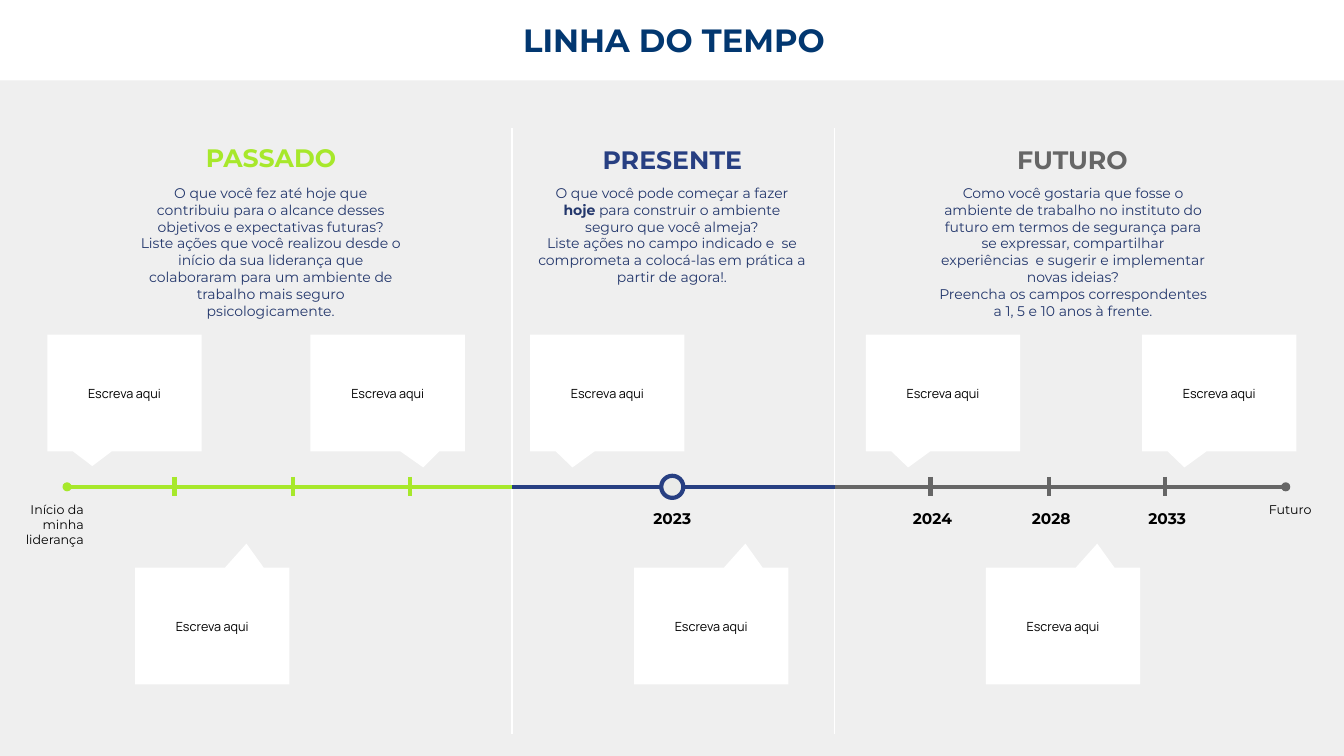
from dataclasses import dataclass

from lxml import etree
from pptx import Presentation
from pptx import util as u
from pptx.dml.color import RGBColor
from pptx.enum import shapes, text
from pptx.oxml.ns import qn

COLORS = {
    "background": "EFEFEF",
    "white": "FFFFFF",
    "black": "000000",
    "title": "023770",
    "past": "A7E82B",
    "present": "273F82",
    "future": "666666",
    "body": "23376C",
    "ring": "EAEBE9",
}
AXIS_Y = 347.75
AXIS_START, PAST_END, PRESENT_END, AXIS_END = 46.8, 365.8, 596.2, 916.6
CENTER, RIGHT = text.PP_ALIGN.CENTER, text.PP_ALIGN.RIGHT


@dataclass
class Style:
    size: float
    color: str
    bold: bool = False
    align: text.PP_ALIGN = CENTER
    font: str = "Montserrat"


@dataclass
class Label:
    left: float
    top: float
    width: float
    height: float
    paragraphs: list[list[str]]
    style: Style


@dataclass
class Line:
    x1: float
    y1: float
    x2: float
    y2: float
    color: str
    width: float = 3


@dataclass
class Dot:
    center: float
    size: float
    fill: str
    outline: str | None = None


@dataclass
class Callout:
    left: float
    top: float
    tip: tuple[float, float]


TITLE = Style(23, "title", bold=True)
BODY = Style(10, "body")
YEAR = Style(11, "black", bold=True)
END = Style(9, "black", align=RIGHT)
PROMPT = Style(9, "black", font="Manrope")

UPPER, LOWER = 239, 405.4
TIP_UP, TIP_LEFT = (0.222, -0.705), (-0.226, 0.637)
CALLOUTS = [
    Callout(33.8, UPPER, (-0.208, 0.625)),
    Callout(96.5, LOWER, TIP_UP),
    Callout(221.8, UPPER, (0.231, 0.637)),
    Callout(378.7, UPPER, TIP_LEFT),
    Callout(452.9, LOWER, TIP_UP),
    Callout(618.5, UPPER, TIP_LEFT),
    Callout(704.2, LOWER, TIP_UP),
    Callout(815.8, UPPER, TIP_LEFT),
]

PAST_TICKS = [124.6, 209.5, 293]
FUTURE_TICKS = [664.6, 749.5, 832.3]
YEARS = zip([478.8, *FUTURE_TICKS], ["2023", "2024", "2028", "2033"])

LABELS = [
    Label(353.5, 10.8, 256.3, 35.3, [["LINHA DO TEMPO"]], TITLE),
    Label(98.6, 97.9, 190, 28.8, [["PASSADO"]], Style(18, "past", bold=True)),
    Label(385.2, 99.4, 190, 28.8, [["PRESENTE"]], Style(18, "present", bold=True)),
    Label(671, 99.4, 190, 28.8, [["FUTURO"]], Style(18, "future", bold=True)),
    Label(90.7, 128.2, 205.2, 104.4, [
        ["O que você fez até hoje que contribuiu para o alcance desses objetivos "
         "e expectativas futuras?"],
        ["Liste ações que você realizou desde o início da sua liderança que "
         "colaboraram para um ambiente de trabalho mais seguro psicologicamente."],
    ], BODY),
    Label(377.3, 128.2, 205.2, 79.9, [
        ["O que você pode começar a fazer ", "hoje",
         " para construir o ambiente seguro que você almeja?"],
        ["Liste ações no campo indicado e  se comprometa a colocá-las em prática "
         "a partir de agora!."],
    ], BODY),
    Label(663.8, 128.2, 205.2, 116.6, [
        ["Como você gostaria que fosse o ambiente de trabalho no instituto do "
         "futuro em termos de segurança para se expressar, compartilhar "
         "experiências  e sugerir e implementar novas ideias?"],
        ["Preencha os campos correspondentes a 1, 5 e 10 anos à frente."],
    ], BODY),
    Label(4.3, 355, 62.6, 40.3, [["Início da minha liderança"]], END),
    Label(881.3, 355, 62.6, 18, [["Futuro"]], END),
    *(Label(x - 21.6, 360, 46.1, 20.9, [[year]], YEAR) for x, year in YEARS),
]

LINES = [
    Line(AXIS_START, AXIS_Y, AXIS_END, AXIS_Y, "future"),
    *(Line(x, 91.4, x, 524.2, "white", 1) for x in (PAST_END, PRESENT_END)),
    *(Line(x, 340.6, x, 354.2, color)
      for color, ticks in (("past", PAST_TICKS), ("future", FUTURE_TICKS))
      for x in ticks),
    Line(PAST_END, AXIS_Y, PRESENT_END, AXIS_Y, "present"),
    Line(AXIS_START, AXIS_Y, PAST_END, AXIS_Y, "past"),
]

DOTS = [
    Dot(47.9, 6.5, "past"),
    Dot(918.4, 6.5, "future"),
    Dot(480.2, 15.8, "ring", "present"),
]


def rgb(name: str) -> RGBColor:
    return RGBColor.from_string(COLORS[name])


def write(frame, paragraphs: list[list[str]], style: Style) -> None:
    frame.word_wrap = True
    formats = {"name": style.font, "size": u.Pt(style.size)}
    for index, spans in enumerate(paragraphs):
        para = frame.paragraphs[0] if index == 0 else frame.add_paragraph()
        para.alignment = style.align
        for words in spans:
            span = para.add_run()
            span.text = words
            for key, value in formats.items():
                setattr(span.font, key, value)
            span.font.bold = style.bold or words == "hoje"
            span.font.color.rgb = rgb(style.color)


def add_label(page, label: Label) -> None:
    box = page.shapes.add_textbox(
        u.Pt(label.left), u.Pt(label.top), u.Pt(label.width), u.Pt(label.height))
    write(box.text_frame, label.paragraphs, label.style)


def add_line(page, line: Line) -> None:
    connector = page.shapes.add_connector(
        shapes.MSO_CONNECTOR.STRAIGHT,
        u.Pt(line.x1), u.Pt(line.y1), u.Pt(line.x2), u.Pt(line.y2))
    connector.line.color.rgb = rgb(line.color)
    connector.line.width = u.Pt(line.width)
    etree.SubElement(connector._element.spPr, qn("a:effectLst"))


def add_filled(page, kind: shapes.MSO_SHAPE, left: float, top: float,
               width: float, height: float, fill: str, outline: str | None = None):
    shape = page.shapes.add_shape(
        kind, u.Pt(left), u.Pt(top), u.Pt(width), u.Pt(height))
    shape.shadow.inherit = False
    shape.fill.solid()
    shape.fill.fore_color.rgb = rgb(fill)
    if outline:
        shape.line.color.rgb = rgb(outline)
        shape.line.width = u.Pt(3)
    else:
        shape.line.fill.background()
    return shape


def add_dot(page, dot: Dot) -> None:
    half = dot.size / 2
    add_filled(page, shapes.MSO_SHAPE.OVAL, dot.center - half, AXIS_Y - half,
               dot.size, dot.size, dot.fill, dot.outline)


def add_callout(page, callout: Callout) -> None:
    shape = add_filled(page, shapes.MSO_SHAPE.RECTANGULAR_CALLOUT,
                       callout.left, callout.top, 110.2, 83.5, "white")
    for index, offset in enumerate(callout.tip):
        shape.adjustments[index] = offset
    shape.text_frame.vertical_anchor = text.MSO_ANCHOR.MIDDLE
    write(shape.text_frame, [["Escreva aqui"]], PROMPT)


def main() -> None:
    deck = Presentation()
    deck.slide_width, deck.slide_height = u.Pt(960), u.Pt(540)
    page = deck.slides.add_slide(deck.slide_layouts[6])
    page.background.fill.solid()
    page.background.fill.fore_color.rgb = rgb("background")
    add_filled(page, shapes.MSO_SHAPE.RECTANGLE, 0, 0, 960, 57.4, "white")
    for draw, items in ((add_line, LINES), (add_dot, DOTS),
                        (add_label, LABELS), (add_callout, CALLOUTS)):
        for item in items:
            draw(page, item)
    deck.save("out.pptx")


if __name__ == "__main__":
    main()
